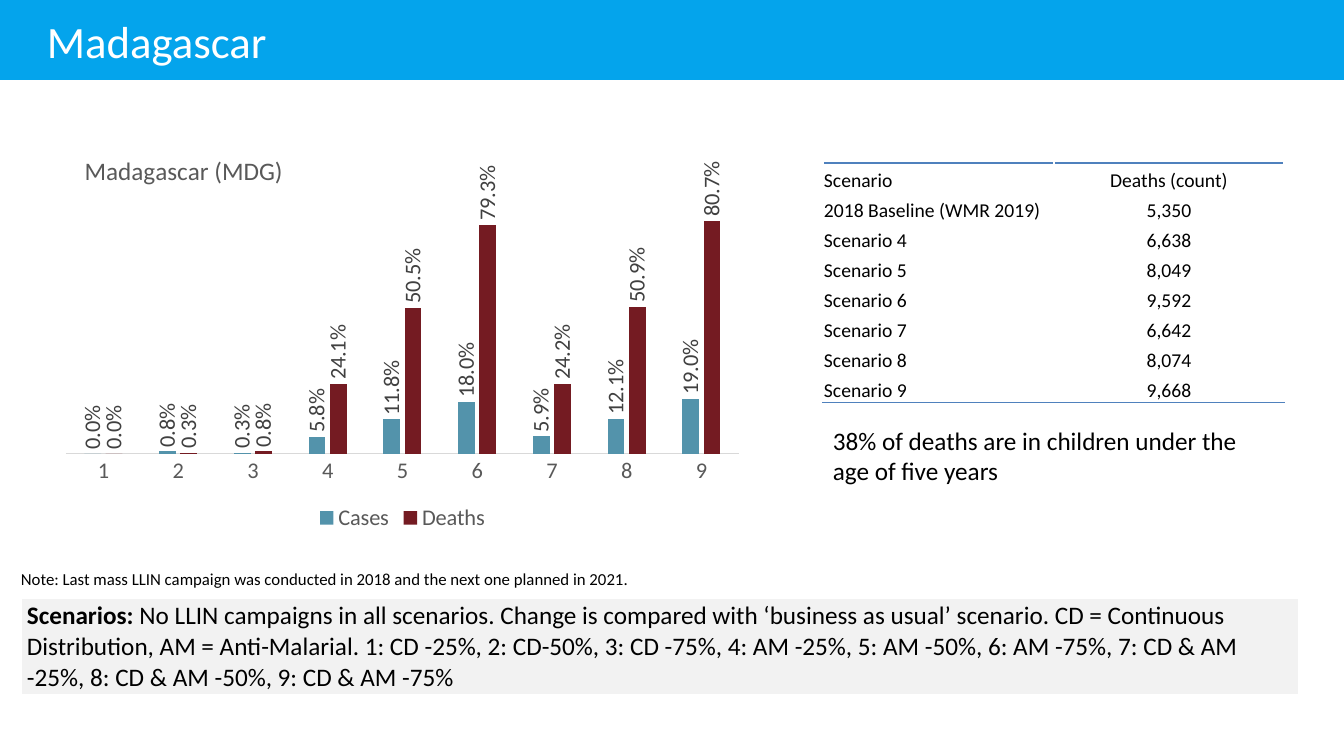
import pptx
import pptx.chart.data
import pptx.dml.color
import pptx.enum.chart
import pptx.enum.text
import pptx.oxml
import pptx.oxml.ns
import pptx.util

PX = 12192000 / 1344
THEME = {
    "font": "Calibri",
    "band": "04A4EC", "white": "FFFFFF", "black": "000000",
    "panel": "F2F2F2", "rule": "4F81BD", "axis": "D9D9D9",
    "grey": "595959", "label": "404040",
    "cases": "5393AB", "deaths": "741B22",
    "title": 32, "head": 18, "body": 18, "chart": 16, "cell": 14, "note": 12,
}
NS = pptx.oxml.ns.nsdecls("a", "c")
ANCHOR = pptx.enum.text.MSO_ANCHOR
ALIGN = pptx.enum.text.PP_ALIGN


def px(*vals):
    """Turn px lengths into a list of EMU lengths."""
    return [pptx.util.Emu(round(val * PX)) for val in vals]


def style(font, size, color):
    font.name = THEME["font"]
    font.size = pptx.util.Pt(THEME[size])
    font.color.rgb = pptx.dml.color.RGBColor.from_string(THEME[color])


deck = pptx.Presentation()
deck.slide_width, deck.slide_height = px(1344, 756)
slide = deck.slides.add_slide(deck.slide_layouts[6])
shapes = slide.shapes

# Title band
band = shapes.add_shape(1, *px(0, 0, 1344, 80))
band.shadow.inherit = False
band.fill.solid()
band.fill.fore_color.rgb = pptx.dml.color.RGBColor.from_string(THEME["band"])
band.line.fill.background()

# Free text
texts = [
    ("Madagascar", (37, 5, 1210, 71), "title", "white", ANCHOR.MIDDLE),
    ("Note: Last mass LLIN campaign was conducted in 2018 and the next one planned in 2021.",
     (11, 564, 839, 30), "note", "black", ANCHOR.TOP),
    ("38% of deaths are in children under the age of five years",
     (823, 420, 461, 72), "body", "black", ANCHOR.TOP),
]
for text, place, size, color, anchor in texts:
    frame = shapes.add_textbox(*px(*place)).text_frame
    frame.word_wrap = True
    frame.vertical_anchor = anchor
    para = frame.paragraphs[0]
    para.text = text
    style(para.font, size, color)

# Scenario key
key = shapes.add_table(1, 1, *px(21, 598, 1278, 97)).table
key.first_row = key.horz_banding = False
cell = key.cell(0, 0)
cell.fill.solid()
cell.fill.fore_color.rgb = pptx.dml.color.RGBColor.from_string(THEME["panel"])
cell.margin_left, cell.margin_top, cell.margin_right, cell.margin_bottom = px(6, 3, 6, 3)
para = cell.text_frame.paragraphs[0]
style(para.font, "body", "black")
lead = para.add_run()
lead.text = "Scenarios: "
lead.font.bold = True
para.add_run().text = (
    "No LLIN campaigns in all scenarios. Change is compared with ‘business as usual’ scenario. "
    "CD = Continuous Distribution, AM = Anti-Malarial. 1: CD -25%, 2: CD-50%, 3: CD -75%, "
    "4: AM -25%, 5: AM -50%, 6: AM -75%, 7: CD & AM -25%, 8: CD & AM -50%, 9: CD & AM -75%"
)

# Death counts
counts = [
    ("Scenario", "Deaths (count)"),
    ("2018 Baseline (WMR 2019)", "5,350"),
    ("Scenario 4", "6,638"),
    ("Scenario 5", "8,049"),
    ("Scenario 6", "9,592"),
    ("Scenario 7", "6,642"),
    ("Scenario 8", "8,074"),
    ("Scenario 9", "9,668"),
]
table = shapes.add_table(len(counts), 2, *px(823, 163, 461, 240)).table
table.first_row = table.horz_banding = False
table.columns[0].width, table.columns[1].width = px(231, 230)
edges = {0: "lnT", len(counts) - 1: "lnB"}
for row, pair in enumerate(counts):
    for col, text in enumerate(pair):
        cell = table.cell(row, col)
        cell.fill.background()
        cell.vertical_anchor = ANCHOR.BOTTOM
        cell.margin_left, cell.margin_top, cell.margin_right, cell.margin_bottom = px(1, 1, 1, 0)
        para = cell.text_frame.paragraphs[0]
        para.text = text
        para.alignment = ALIGN.CENTER if col else ALIGN.LEFT
        style(para.font, "cell", "black")
        if row in edges:
            edge = edges[row]
            cell._tc.get_or_add_tcPr().insert(0, pptx.oxml.parse_xml(
                f'<a:{edge} {NS} w="12700"><a:solidFill><a:srgbClr val="{THEME["rule"]}"/>'
                f'</a:solidFill></a:{edge}>'))

# Change chart
data = pptx.chart.data.CategoryChartData(number_format="0.0%")
data.categories = [str(num) for num in range(1, 10)]
data.add_series("Cases", [0, 0.008, 0.003, 0.058, 0.118, 0.18, 0.059, 0.121, 0.19])
data.add_series("Deaths", [0, 0.003, 0.008, 0.241, 0.505, 0.793, 0.242, 0.509, 0.807])
chart = shapes.add_chart(
    pptx.enum.chart.XL_CHART_TYPE.COLUMN_CLUSTERED, *px(52, 124, 701, 412), data).chart
style(chart.font, "chart", "grey")
chart.has_title = True
para = chart.chart_title.text_frame.paragraphs[0]
para.text = "Madagascar (MDG)"
style(para.font, "head", "grey")
para.font.bold = False
chart.has_legend = True
chart.legend.position = pptx.enum.chart.XL_LEGEND_POSITION.BOTTOM
chart.legend.include_in_layout = False
style(chart.legend.font, "chart", "grey")

axis = chart.category_axis
axis.major_tick_mark = pptx.enum.chart.XL_TICK_MARK.NONE
axis.format.line.color.rgb = pptx.dml.color.RGBColor.from_string(THEME["axis"])
axis.format.line.width = pptx.util.Pt(0.75)
style(axis.tick_labels.font, "chart", "grey")
scale = chart.value_axis
scale.minimum_scale, scale.maximum_scale = 0, 1
scale.has_major_gridlines = False
scale.visible = False

plot = chart.plots[0]
plot.vary_by_categories = False
plot.gap_width, plot.overlap = 219, -27
for series, color in zip(plot.series, ("cases", "deaths")):
    series.format.fill.solid()
    series.format.fill.fore_color.rgb = pptx.dml.color.RGBColor.from_string(THEME[color])
    labels = series.data_labels
    labels.show_value = True
    labels.number_format = "0.0%"
    labels.number_format_is_linked = False
    labels.position = pptx.enum.chart.XL_LABEL_POSITION.OUTSIDE_END
    style(labels.font, "chart", "label")
    body = labels._element.find(".//" + pptx.oxml.ns.qn("a:bodyPr"))
    body.set("rot", "-5400000")
    body.set("vert", "horz")

# Title and plot places, as shares of the chart
title = chart.chart_title._element
area = chart._chartSpace.chart.plotArea
spots = [
    (title, 1, "", {"x": 0.04, "y": 0.06}),
    (area, 0, '<c:layoutTarget val="inner"/>', {"x": 0.02, "y": 0.1, "w": 0.96, "h": 0.7}),
]
for part, index, target, place in spots:
    for old in part.findall(pptx.oxml.ns.qn("c:layout")):
        part.remove(old)
    modes = "".join(f'<c:{side}Mode val="edge"/>' for side in "xy")
    sizes = "".join(f'<c:{side} val="{share}"/>' for side, share in place.items())
    part.insert(index, pptx.oxml.parse_xml(
        f"<c:layout {NS}><c:manualLayout>{target}{modes}{sizes}</c:manualLayout></c:layout>"))

deck.save("out.pptx")
